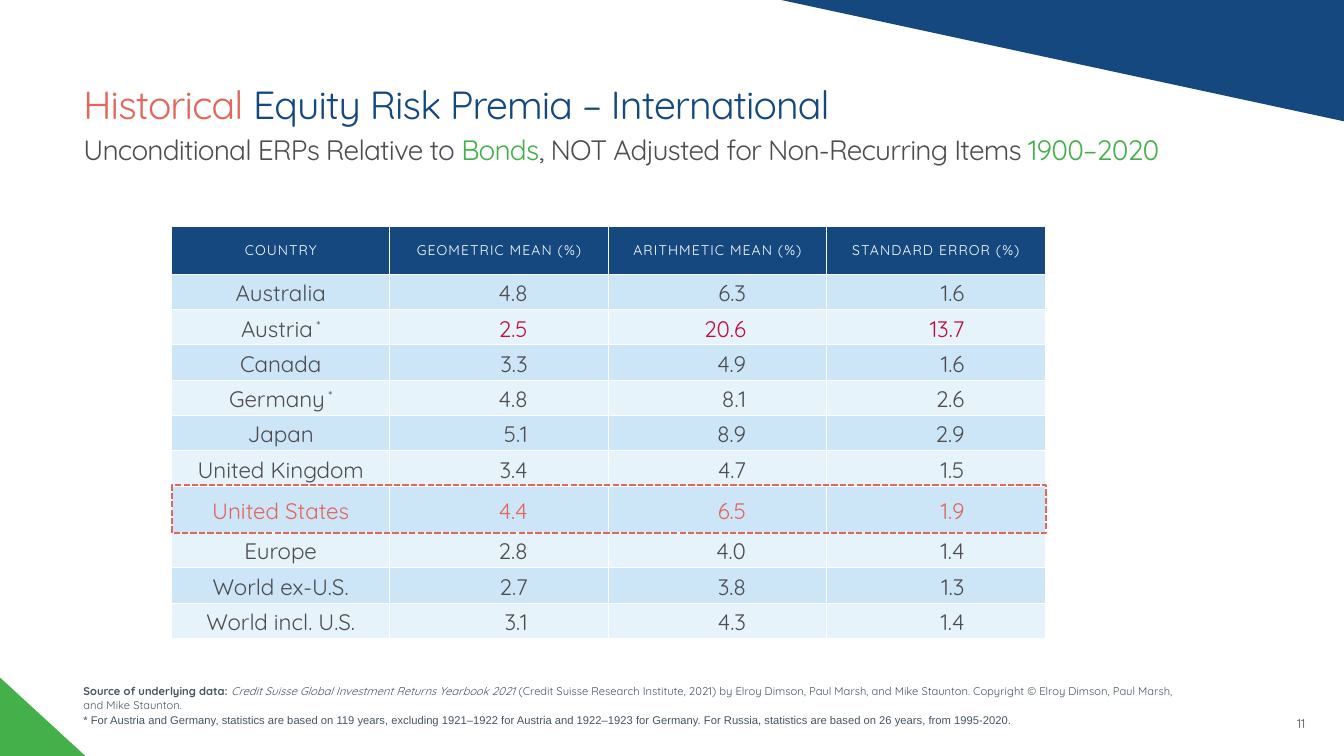
from lxml import etree
from pptx import Presentation
from pptx.dml.color import RGBColor
from pptx.enum.dml import MSO_LINE
from pptx.enum.shapes import MSO_SHAPE
from pptx.enum.text import MSO_ANCHOR, PP_ALIGN
from pptx.oxml.ns import qn
from pptx.util import Pt

TOP, MIDDLE, BOTTOM = MSO_ANCHOR.TOP, MSO_ANCHOR.MIDDLE, MSO_ANCHOR.BOTTOM
CENTER, RIGHT = PP_ALIGN.CENTER, PP_ALIGN.RIGHT
DASH, RECTANGLE = MSO_LINE.SQUARE_DOT, MSO_SHAPE.RECTANGLE

NAVY, GREEN, CORAL, RED = "14487F", "43B049", "E2665C", "BF0D3E"
GRAY, SLATE, WHITE = "4D4D4F", "455560", "FFFFFF"
BANDS = ["CCE5F7", "E7F3FB"]


def rgb(color):
    return RGBColor.from_string(color)


def add_run(p, text, size, color, font="Quicksand", bold=False, italic=False,
            spacing=0, baseline=0):
    """Spacing is in points, baseline in percent of the text size."""
    r = p.add_run()
    r.text = text
    r.font.size = Pt(size)
    r.font.name = font
    r.font.bold = bold
    r.font.italic = italic
    r.font.color.rgb = rgb(color)
    rPr = r._r.get_or_add_rPr()
    if spacing:
        rPr.set("spc", str(round(spacing * 100)))
    if baseline:
        rPr.set("baseline", str(baseline * 1000))


prs = Presentation()
prs.slide_width, prs.slide_height = Pt(960), Pt(540)
s = prs.slides.add_slide(prs.slide_layouts[6])

# Corner triangles
corners = [
    (NAVY, [(551, -1.5), (961.5, 87), (961.5, -1.5)]),
    (GREEN, [(61, 540), (0, 484), (0, 540)]),
]
for color, points in corners:
    builder = s.shapes.build_freeform(Pt(points[0][0]), Pt(points[0][1]))
    builder.add_line_segments([(Pt(x), Pt(y)) for x, y in points[1:]], close=True)
    sp = builder.convert_to_shape()
    sp.shadow.inherit = False
    sp.fill.solid()
    sp.fill.fore_color.rgb = rgb(color)
    sp.line.fill.background()

# Title, source note and page number
heading = {"size": 28, "spacing": -0.6}
subheading = {"size": 20, "spacing": -0.6}
note = {"size": 8, "color": SLATE}
title = [[
    ("Historical", {**heading, "color": CORAL}),
    (" Equity Risk Premia – International", {**heading, "color": NAVY}),
    None,
    ("Unconditional ERPs Relative to ", {**subheading, "color": GRAY}),
    ("Bonds", {**subheading, "color": GREEN}),
    (", NOT Adjusted for Non-Recurring Items ", {**subheading, "color": GRAY}),
    ("1900–2020", {**subheading, "color": GREEN}),
]]
source_note = [
    [
        ("Source of underlying data: ", {**note, "bold": True}),
        ("Credit Suisse Global Investment Returns Yearbook 2021 ", {**note, "italic": True}),
        ("(Credit Suisse Research Institute, 2021) by Elroy Dimson, Paul Marsh, and "
         "Mike Staunton. Copyright © Elroy Dimson, Paul Marsh, and Mike Staunton.", note),
    ],
    [
        ("* For Austria and Germany, statistics are based on 119 years, excluding "
         "1921–1922 for Austria and 1922–1923 for Germany. For Russia, statistics are "
         "based on 26 years, from 1995-2020.", {**note, "font": "Arial"}),
    ],
]
page_number = [[("11", {"size": 9, "color": GRAY})]]

text_boxes = [
    ((52.5, 39, 816.5, 93.5), (7.2, 3.6), MIDDLE, 1.13, title),
    ((52.5, 484.5, 793.5, 37.5), (7.2, 3.6), TOP, 1.07, source_note),
    ((926.5, 508.5, 33.5, 13.5), (0, 0), BOTTOM, 1, page_number),
]
for box, (inset_x, inset_y), anchor, line_spacing, paragraphs in text_boxes:
    tf = s.shapes.add_textbox(*map(Pt, box)).text_frame
    tf.word_wrap = True
    tf.vertical_anchor = anchor
    tf.margin_left = tf.margin_right = Pt(inset_x)
    tf.margin_top = tf.margin_bottom = Pt(inset_y)
    for i, runs in enumerate(paragraphs):
        p = tf.add_paragraph() if i else tf.paragraphs[0]
        p.line_spacing = line_spacing
        for run in runs:
            if run is None:
                p.add_line_break()
            else:
                add_run(p, run[0], **run[1])

# Risk premia table
rows = [
    ("COUNTRY", "GEOMETRIC MEAN (%)", "ARITHMETIC MEAN (%)", "STANDARD ERROR (%)"),
    ("Australia", "4.8", "6.3", "1.6"),
    ("Austria *", "2.5", "20.6", "13.7"),
    ("Canada", "3.3", "4.9", "1.6"),
    ("Germany *", "4.8", "8.1", "2.6"),
    ("Japan", "5.1", "8.9", "2.9"),
    ("United Kingdom", "3.4", "4.7", "1.5"),
    ("United States", "4.4", "6.5", "1.9"),
    ("Europe", "2.8", "4.0", "1.4"),
    ("World ex-U.S.", "2.7", "3.8", "1.3"),
    ("World incl. U.S.", "3.1", "4.3", "1.4"),
]
heights = {"COUNTRY": 34, "United States": 33.2}
frame = s.shapes.add_table(len(rows), 4, Pt(122.5), Pt(162), Pt(624), Pt(294))
table = frame.table
table.first_row = table.horz_banding = False
for column in table.columns:
    column.width = Pt(156)

for i, values in enumerate(rows):
    country = values[0]
    table.rows[i].height = Pt(heights.get(country, 25.2))
    for j, value in enumerate(values):
        cell = table.cell(i, j)
        tcPr = cell._tc.get_or_add_tcPr()
        for side in ("a:lnL", "a:lnR", "a:lnT", "a:lnB"):
            border = etree.SubElement(tcPr, qn(side), w=str(Pt(0.75)))
            fill = etree.SubElement(border, qn("a:solidFill"))
            etree.SubElement(fill, qn("a:srgbClr"), val=WHITE)
        cell.fill.solid()
        cell.fill.fore_color.rgb = rgb(BANDS[(i - 1) % 2] if i else NAVY)
        cell.vertical_anchor = MIDDLE
        cell.margin_left = cell.margin_top = cell.margin_bottom = 0
        is_number = i > 0 and j > 0
        cell.margin_right = Pt(57.6 if is_number else 0)
        p = cell.text_frame.paragraphs[0]
        p.alignment = RIGHT if is_number else CENTER
        if i == 0:
            add_run(p, value, 10, WHITE, spacing=0.8)
            continue
        p.line_spacing = 1.1
        color = GRAY
        if country == "United States":
            color = CORAL
        elif country == "Austria *" and is_number:
            color = RED
        name, star, _ = value.partition(" *")
        add_run(p, name, 16, color)
        if star:
            add_run(p, star, 16, color, baseline=30)

# Dashed frame around the United States row
sp = s.shapes.add_shape(RECTANGLE, Pt(123), Pt(346.5), Pt(624), Pt(34.5))
sp.shadow.inherit = False
sp.fill.background()
sp.line.color.rgb = rgb(CORAL)
sp.line.width = Pt(1.5)
sp.line.dash_style = DASH

prs.save("out.pptx")
